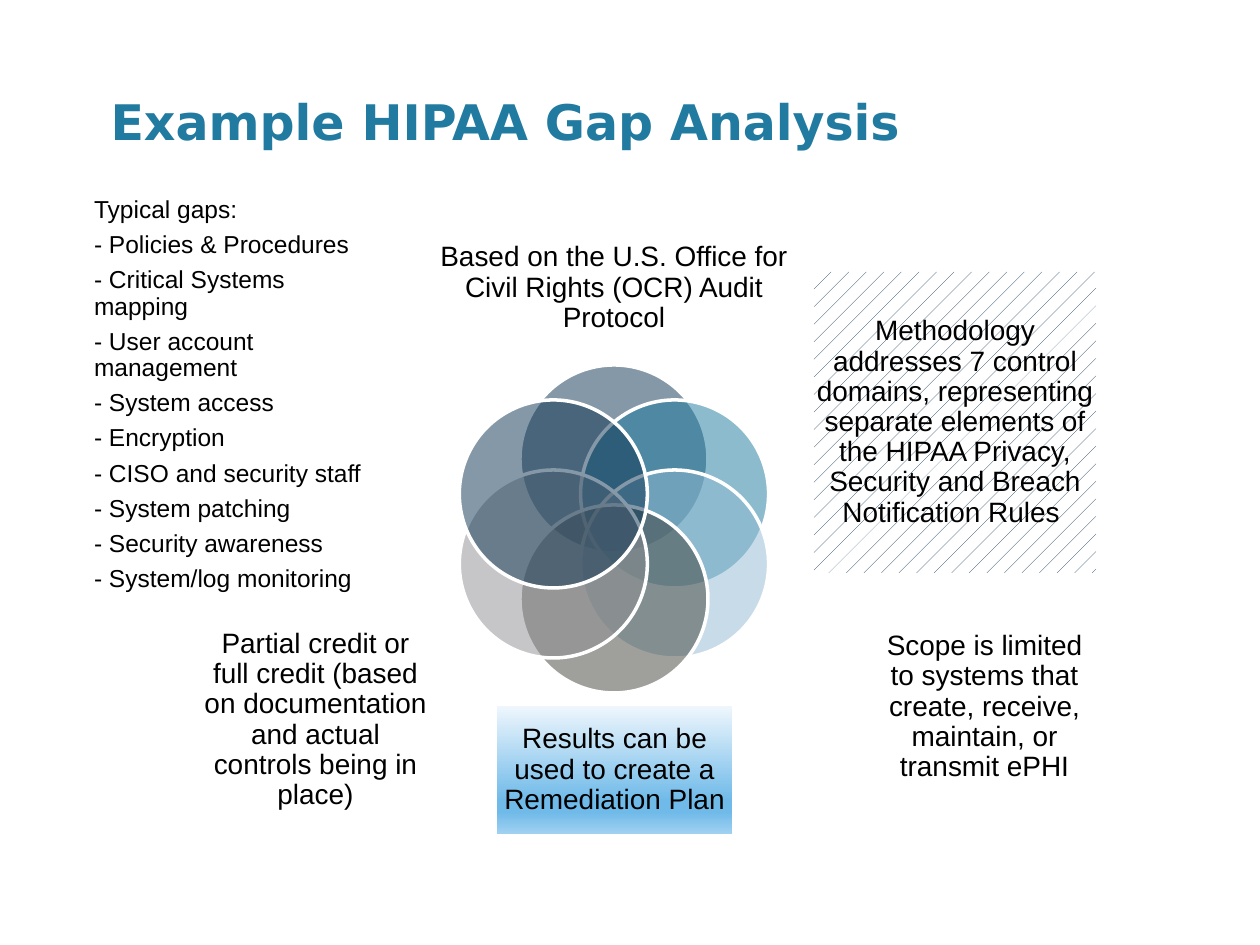
"""Build the HIPAA gap analysis slide: a six-circle Venn with captions and a list of gaps."""
import math
from dataclasses import dataclass
from typing import Optional

from lxml import etree
from pptx import Presentation, util as u
from pptx.dml import color as dml
from pptx.enum import dml as fills, shapes, text
from pptx.oxml import ns

SCALE = u.Inches(1) / 126
COLORS = {
    "title": "217AA0", "ink": "000000", "white": "FFFFFF",
    "navy": "0C3351", "teal": "1B799F", "sky": "91BAD3",
    "olive": "414139", "grey": "8F8F93",
    "pale": "EFF7FD", "blue": "70BAE9", "light": "A0D1F1",
}
HUB_X, HUB_Y, ORBIT, DIAMETER = 614, 529, 70, 188
PETALS = ["navy", "teal", "sky", "olive", "grey", "navy"]
GRADIENT = [(0, "pale"), (74, "blue"), (83, "blue"), (100, "light")]
GAPS = [
    "Typical gaps:", "- Policies & Procedures", "- Critical Systems mapping",
    "- User account management", "- System access", "- Encryption",
    "- CISO and security staff", "- System patching", "- Security awareness",
    "- System/log monitoring",
]
FRAME = {
    "word_wrap": True, "auto_size": text.MSO_AUTO_SIZE.NONE,
    "vertical_anchor": text.MSO_ANCHOR.MIDDLE,
    "margin_left": 0, "margin_right": 0, "margin_top": 0, "margin_bottom": 0,
}


@dataclass
class Caption:
    words: str
    left: int
    top: int
    width: int
    height: int
    fill: Optional[str] = None


CAPTIONS = [
    Caption("Based on the U.S. Office for Civil Rights (OCR) Audit Protocol", 433, 234, 362, 108),
    Caption("Methodology addresses 7 control domains, representing separate elements of "
            "the HIPAA Privacy, Security and Breach Notification Rules ",
            814, 272, 282, 301, "pattern"),
    Caption("Scope is limited to systems that create, receive, maintain, or transmit ePHI",
            873, 629, 223, 156),
    Caption("Results can be used to create a Remediation Plan", 497, 706, 235, 128, "gradient"),
    Caption("Partial credit or full credit (based on documentation and actual controls "
            "being in place)", 204, 642, 223, 156),
]


def px(*lengths: float) -> list[int]:
    return [round(length * SCALE) for length in lengths]


def rgb(name: str) -> dml.RGBColor:
    return dml.RGBColor.from_string(COLORS[name])


def assign(target, values: dict) -> None:
    for name, value in values.items():
        setattr(target, name, value)


def place(box, left: int, top: int, width: int, height: int) -> None:
    assign(box, dict(zip(("left", "top", "width", "height"), px(left, top, width, height))))


def write(box, lines: list[str], size: int, align) -> None:
    frame = box.text_frame
    assign(frame, FRAME)
    for index, line in enumerate(lines):
        para = frame.paragraphs[0] if index == 0 else frame.add_paragraph()
        assign(para, {"alignment": align, "line_spacing": 0.9,
                      "space_before": u.Pt(0), "space_after": u.Pt(round(size * 0.35, 1))})
        span = para.add_run()
        span.text = line
        assign(span.font, {"name": "Arial", "size": u.Pt(size)})
        span.font.color.rgb = rgb("ink")


def add_title(page) -> None:
    box = page.shapes.title
    place(box, 98, 79, 1099, 111)
    assign(box.text_frame, {**FRAME, "vertical_anchor": text.MSO_ANCHOR.TOP,
                            "margin_left": u.Inches(0.1), "margin_top": px(12)[0]})
    para = box.text_frame.paragraphs[0]
    para.alignment = text.PP_ALIGN.LEFT
    span = para.add_run()
    span.text = "Example HIPAA Gap Analysis"
    assign(span.font, {"name": "DejaVu Sans", "size": u.Pt(28), "bold": True})
    span.font.color.rgb = rgb("title")


def add_gaps(page) -> None:
    box = page.placeholders[1]
    place(box, 94, 231, 280, 328)
    write(box, GAPS, 14, text.PP_ALIGN.LEFT)
    for para in box.text_frame.paragraphs:
        props = para._p.get_or_add_pPr()
        props.set("marL", "0")
        props.set("indent", "0")
        etree.SubElement(props, ns.qn("a:buNone"))


def add_petal(page, index: int, color: str) -> None:
    angle = math.radians(60 * index - 90)
    left = HUB_X + ORBIT * math.cos(angle) - DIAMETER / 2
    top = HUB_Y + ORBIT * math.sin(angle) - DIAMETER / 2
    petal = page.shapes.add_shape(shapes.MSO_SHAPE.OVAL, *px(left, top, DIAMETER, DIAMETER))
    petal.shadow.inherit = False
    petal.fill.solid()
    petal.fill.fore_color.rgb = rgb(color)
    tint = petal.fill._xPr.find(ns.qn("a:solidFill"))[0]
    etree.SubElement(tint, ns.qn("a:alpha"), val="50000")
    petal.line.color.rgb = rgb("white")
    petal.line.width = u.Pt(2)


def fill_gradient(box) -> None:
    box.fill.gradient()
    box.fill.gradient_angle = 270
    stops = box.fill._xPr.find(ns.qn("a:gradFill")).find(ns.qn("a:gsLst"))
    for stop in list(stops):
        stops.remove(stop)
    for position, color in GRADIENT:
        stop = etree.SubElement(stops, ns.qn("a:gs"), pos=str(position * 1000))
        etree.SubElement(stop, ns.qn("a:srgbClr"), val=COLORS[color])


def fill_pattern(box) -> None:
    box.fill.patterned()
    box.fill.pattern = fills.MSO_PATTERN.PERCENT_5
    box.fill.fore_color.rgb = rgb("navy")
    box.fill.back_color.rgb = rgb("white")


def add_caption(page, caption: Caption) -> None:
    area = px(caption.left, caption.top, caption.width, caption.height)
    if caption.fill:
        box = page.shapes.add_shape(shapes.MSO_SHAPE.RECTANGLE, *area)
        box.shadow.inherit = False
        box.line.fill.background()
        {"gradient": fill_gradient, "pattern": fill_pattern}[caption.fill](box)
    else:
        box = page.shapes.add_textbox(*area)
    write(box, [caption.words], 16, text.PP_ALIGN.CENTER)


def main() -> None:
    deck = Presentation()
    assign(deck, {"slide_width": u.Inches(10), "slide_height": u.Inches(7.5)})
    page = deck.slides.add_slide(deck.slide_layouts[1])
    add_title(page)
    add_gaps(page)
    for index, color in enumerate(PETALS):
        add_petal(page, index, color)
    for caption in CAPTIONS:
        add_caption(page, caption)
    deck.save("out.pptx")


if __name__ == "__main__":
    main()
